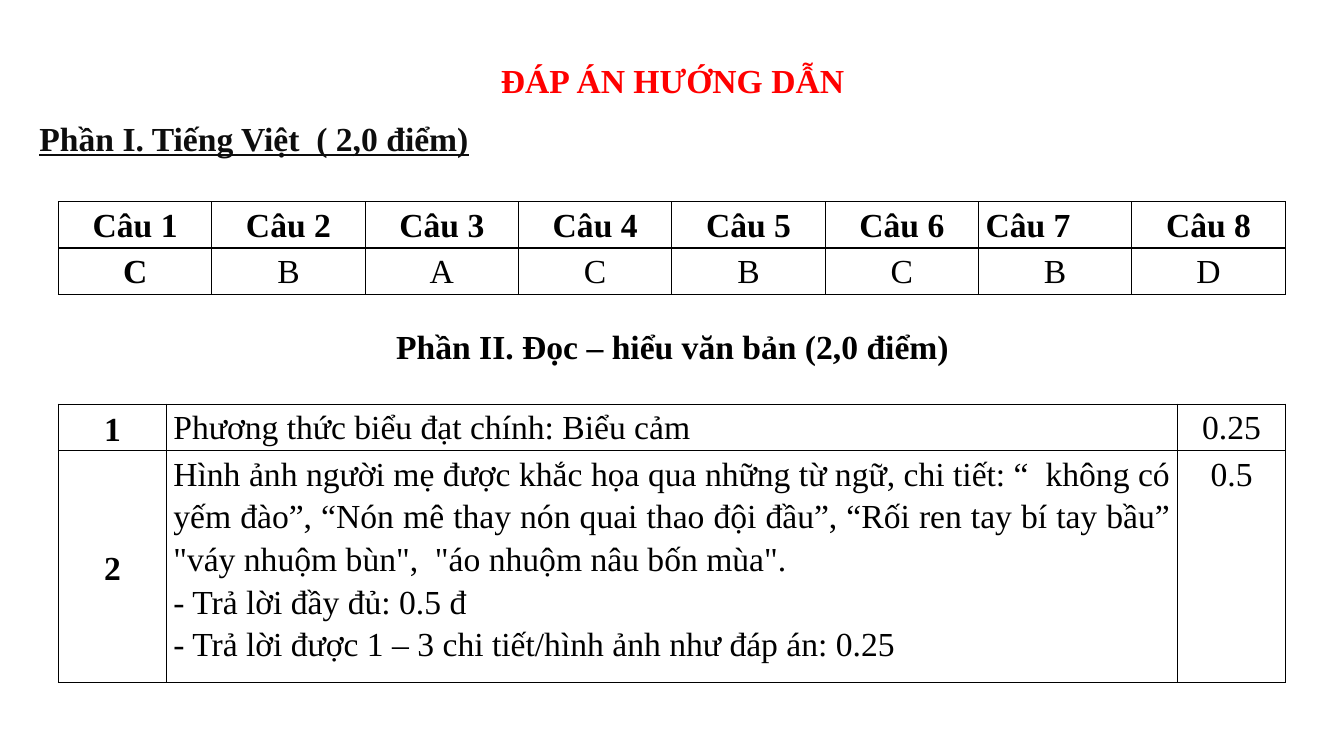
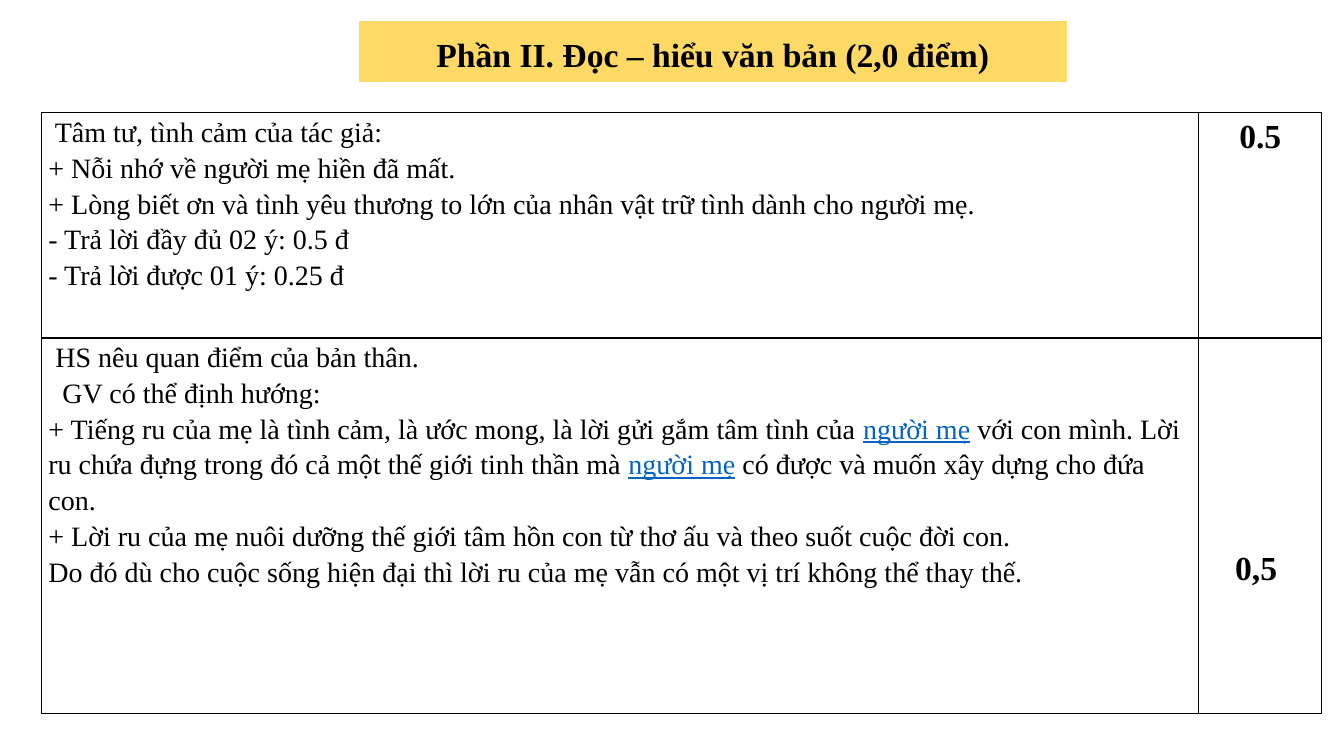
from lxml.etree import SubElement
from pptx import Presentation
from pptx.dml.color import RGBColor
from pptx.enum.text import MSO_ANCHOR, MSO_AUTO_SIZE, PP_ALIGN
from pptx.oxml.ns import qn
from pptx.util import Inches, Pt

BLACK = RGBColor(0x00, 0x00, 0x00)
WHITE = RGBColor(0xFF, 0xFF, 0xFF)
RED = RGBColor(0xFF, 0x00, 0x00)
INK = RGBColor(0x0D, 0x0D, 0x0D)
GOLD = RGBColor(0xFF, 0xD9, 0x66)
LINK_BLUE = RGBColor(0x05, 0x63, 0xC1)

FONT = "Times New Roman"
LARGE, SMALL = 24, 20
SIDES = ("L", "R", "T", "B")
THIN = dict.fromkeys(SIDES, 1)
BAND_EDGES = {"L": 1, "R": 1, "T": 3, "B": 3}
LEFT, CENTER, JUSTIFY = PP_ALIGN.LEFT, PP_ALIGN.CENTER, PP_ALIGN.JUSTIFY

PART_TWO = "Phần II. Đọc – hiểu văn bản (2,0 điểm)"
ANSWERS = "CBACBCBD"

MOTHER_IMAGE = [
    "Hình ảnh người mẹ được khắc họa qua những từ ngữ, chi tiết: “  không có yếm đào”, "
    "“Nón mê thay nón quai thao đội đầu”, “Rối ren tay bí tay bầu” "
    "\"váy nhuộm bùn\",  \"áo nhuộm nâu bốn mùa\".",
    "- Trả lời đầy đủ: 0.5 đ",
    "- Trả lời được 1 – 3 chi tiết/hình ảnh như đáp án: 0.25 ",
]
FEELINGS = [
    " Tâm tư, tình cảm của tác giả:",
    "+ Nỗi nhớ về người mẹ hiền đã mất.",
    "+ Lòng biết ơn và tình yêu thương to lớn của nhân vật trữ tình dành cho người mẹ.",
    "- Trả lời đầy đủ 02 ý: 0.5 đ",
    "- Trả lời được 01 ý: 0.25 đ",
]
# Bars enclose the words styled as links
VIEWPOINT = [
    " HS nêu quan điểm của bản thân.",
    "  GV có thể định hướng:",
    "+ Tiếng ru của mẹ là tình cảm, là ước mong, là lời gửi gắm tâm tình của |người mẹ| "
    "với con mình. Lời ru chứa đựng trong đó cả một thế giới tinh thần mà |người mẹ| "
    "có được và muốn xây dựng cho đứa con.",
    "+ Lời ru của mẹ nuôi dưỡng thế giới tâm hồn con từ thơ ấu và theo suốt cuộc đời con.",
    "Do đó dù cho cuộc sống hiện đại thì lời ru của mẹ vẫn có một vị trí không thể thay thế.",
]


def write(frame, lines, size=LARGE, bold=False, align=LEFT, color=BLACK,
          spacing=1.15, before=0, after=0, underline=False):
    for index, line in enumerate(lines):
        paragraph = frame.add_paragraph() if index else frame.paragraphs[0]
        paragraph.alignment = align
        paragraph.line_spacing = spacing
        paragraph.space_before, paragraph.space_after = Pt(before), Pt(after)
        font = paragraph.font
        font.name, font.size, font.bold = FONT, Pt(size), bold
        font.color.rgb = color
        for part, text in enumerate(line.split("|")):
            run = paragraph.add_run()
            run.text = text
            linked = part % 2 == 1
            run.font.underline = underline or linked
            if linked:
                run.font.color.rgb = LINK_BLUE


def draw_borders(cell, color, widths):
    properties = cell._tc.get_or_add_tcPr()
    for side in SIDES:
        line = SubElement(properties, qn(f"a:ln{side}"), w=str(Pt(widths[side])))
        fill = SubElement(line, qn("a:solidFill"))
        SubElement(fill, qn("a:srgbClr"), val=str(color))


def add_grid(slide, box, columns, rows, fill=WHITE, line=BLACK, widths=THIN):
    """Add a plain table; columns and rows are weights within the box."""
    left, top, width, height = box
    table = slide.shapes.add_table(len(rows), len(columns), *map(Inches, box)).table
    table.first_row = table.horz_banding = False
    for column, weight in zip(table.columns, columns):
        column.width = Inches(width * weight / sum(columns))
    for row, weight in zip(table.rows, rows):
        row.height = Inches(height * weight / sum(rows))
    for cell in table.iter_cells():
        cell.margin_left = cell.margin_right = Inches(0.07)
        cell.margin_top = cell.margin_bottom = 0
        draw_borders(cell, line, widths)
        cell.fill.solid()
        cell.fill.fore_color.rgb = fill
    return table


def add_heading(slide, box, text, color, wrap=True, underline=False):
    frame = slide.shapes.add_textbox(*map(Inches, box)).text_frame
    frame.word_wrap = wrap
    frame.auto_size = MSO_AUTO_SIZE.SHAPE_TO_FIT_TEXT
    write(frame, [text], bold=True, align=CENTER, color=color, after=10,
          underline=underline)


def add_section_band(slide, left, top, fill):
    band = add_grid(slide, (left, top, 7.04, 0.64), [1], [1], fill, WHITE, BAND_EDGES)
    write(band.cell(0, 0).text_frame, [PART_TWO], bold=True, align=CENTER,
          spacing=1.5, before=6, after=6)


def add_answer_key(slide, box):
    key = add_grid(slide, box, [1] * len(ANSWERS), [1, 1])
    for column, answer in enumerate(ANSWERS):
        number = column + 1
        write(key.cell(0, column).text_frame, [f"Câu {number}"], bold=True,
              align=LEFT if number == 7 else CENTER)
        write(key.cell(1, column).text_frame, [answer], bold=number == 1, align=CENTER)


def add_reading_answers(slide, box):
    reading = add_grid(slide, box, [1.07, 10.03, 1.07], [1, 5])
    answers = [(["Phương thức biểu đạt chính: Biểu cảm"], "0.25"), (MOTHER_IMAGE, "0.5")]
    for row, (lines, points) in enumerate(answers):
        number = reading.cell(row, 0)
        number.vertical_anchor = MSO_ANCHOR.MIDDLE
        write(number.text_frame, [str(row + 1)], bold=True, align=CENTER)
        write(reading.cell(row, 1).text_frame, lines, align=JUSTIFY)
        write(reading.cell(row, 2).text_frame, [points], align=CENTER)


def add_open_answers(slide, box):
    open_answers = add_grid(slide, box, [11.48, 1.22], [2.23, 3.72])
    answers = [(FEELINGS, "0.5", 0), (VIEWPOINT, "0,5 ", 2.05)]
    for row, (lines, points, drop) in enumerate(answers):
        write(open_answers.cell(row, 0).text_frame, lines, size=SMALL)
        score = open_answers.cell(row, 1)
        score.margin_top = Inches(drop)
        write(score.text_frame, [points], bold=True, align=CENTER)


def build_key_slide(slide):
    add_heading(slide, (3.86, 0.49, 5.62, 0.57), "ĐÁP ÁN HƯỚNG DẪN", RED)
    add_heading(slide, (0.27, 1.06, 4.5, 0.53), "Phần I. Tiếng Việt  ( 2,0 điểm)", INK,
                wrap=False, underline=True)
    add_answer_key(slide, (0.58, 2, 12.17, 0.92))
    add_section_band(slide, 3.15, 3.09, WHITE)
    add_reading_answers(slide, (0.58, 4.01, 12.17, 2.76))


def build_open_slide(slide):
    add_open_answers(slide, (0.41, 1.12, 12.7, 5.96))
    add_section_band(slide, 3.55, 0.19, GOLD)


def main():
    deck = Presentation()
    deck.slide_width, deck.slide_height = Inches(13.33), Inches(7.5)
    for build in (build_key_slide, build_open_slide):
        build(deck.slides.add_slide(deck.slide_layouts[6]))
    deck.save("out.pptx")


if __name__ == "__main__":
    main()
